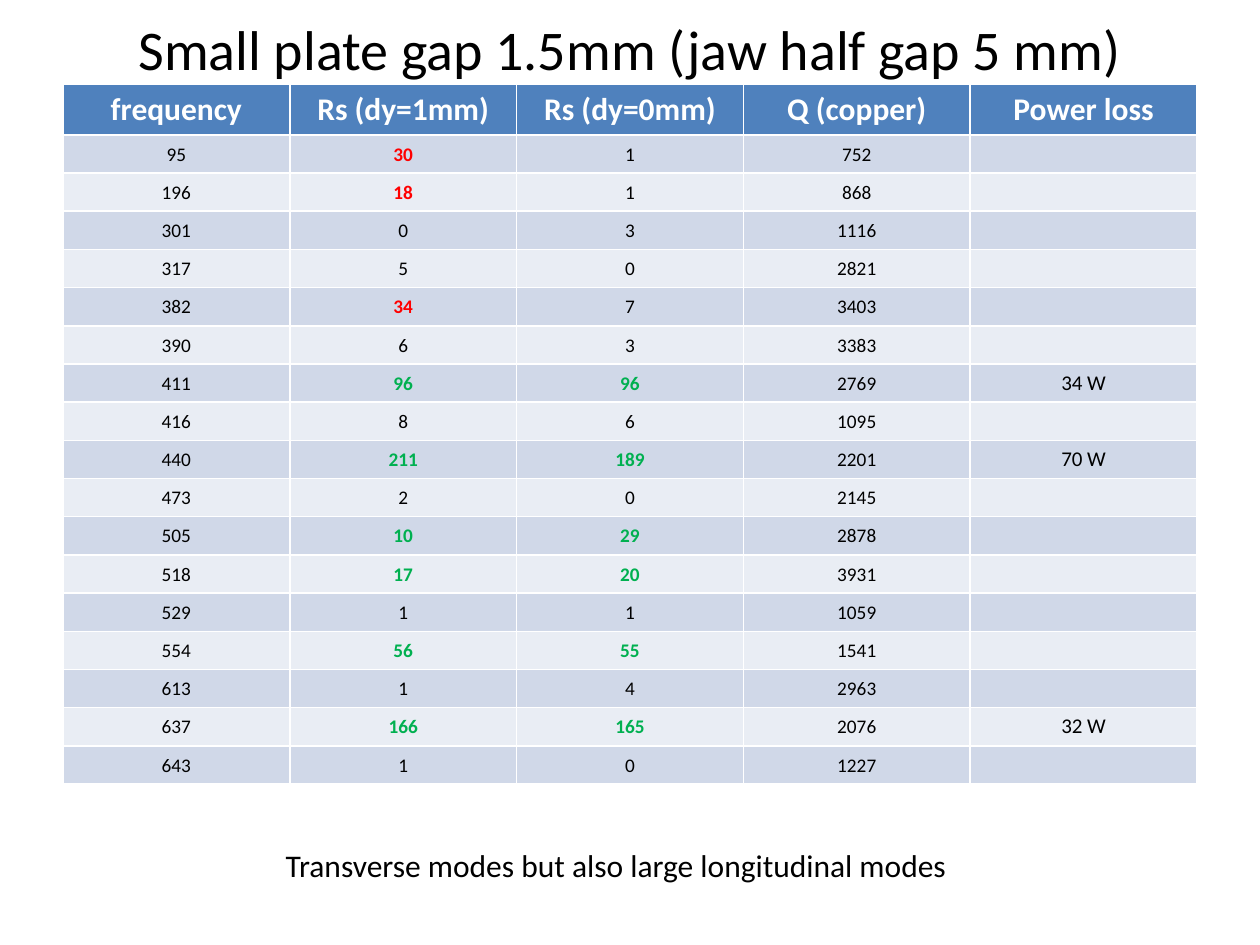
"""Build the slide listing the modes of a small plate with a 1.5 mm gap."""
from pptx import Presentation
from pptx.dml.color import RGBColor
from pptx.enum.text import MSO_ANCHOR as ANCHOR, PP_ALIGN as ALIGN
from pptx.util import Cm, Pt

BLACK = RGBColor(0x00, 0x00, 0x00)
WHITE = RGBColor(0xFF, 0xFF, 0xFF)
RED = RGBColor(0xFF, 0x00, 0x00)
GREEN = RGBColor(0x00, 0xB0, 0x50)
BLUE = RGBColor(0x4F, 0x81, 0xBD)
BAND_DARK = RGBColor(0xD0, 0xD8, 0xE8)
BAND_LIGHT = RGBColor(0xE9, 0xED, 0xF4)

HEADER = ["frequency", "Rs (dy=1mm)", "Rs (dy=0mm)", "Q (copper)", "Power loss"]
MODES = [
    (95, 30, 1, 752, ""),
    (196, 18, 1, 868, ""),
    (301, 0, 3, 1116, ""),
    (317, 5, 0, 2821, ""),
    (382, 34, 7, 3403, ""),
    (390, 6, 3, 3383, ""),
    (411, 96, 96, 2769, "34 W"),
    (416, 8, 6, 1095, ""),
    (440, 211, 189, 2201, "70 W"),
    (473, 2, 0, 2145, ""),
    (505, 10, 29, 2878, ""),
    (518, 17, 20, 3931, ""),
    (529, 1, 1, 1059, ""),
    (554, 56, 55, 1541, ""),
    (613, 1, 4, 2963, ""),
    (637, 166, 165, 2076, "32 W"),
    (643, 1, 0, 1227, ""),
]
TRANSVERSE = {95, 196, 382}
LONGITUDINAL = {411, 440, 505, 518, 554, 637}


def write(p, text, size, color=BLACK, bold=False, align=ALIGN.CENTER):
    p.alignment = align
    if not text:
        p._p.get_or_add_endParaRPr().set("sz", str(size * 100))
        return
    r = p.add_run()
    r.text = text
    r.font.color.rgb = color
    for name, value in {"name": "Calibri", "size": Pt(size), "bold": bold}.items():
        setattr(r.font, name, value)


prs = Presentation()
prs.slide_width, prs.slide_height = Cm(25.4), Cm(19.05)
s = prs.slides.add_slide(prs.slide_layouts[6])

texts = [
    ("Small plate gap 1.5mm (jaw half gap 5 mm)", 32, ALIGN.CENTER,
     (1.27, -0.2, 22.86, 2.34), {"word_wrap": True, "vertical_anchor": ANCHOR.MIDDLE}),
    ("Transverse modes but also large longitudinal modes", 18, ALIGN.LEFT,
     (5.51, 16.94, 14, 1.03), {"word_wrap": False, "vertical_anchor": ANCHOR.TOP}),
]
for text, size, align, box, fmt in texts:
    sp = s.shapes.add_textbox(*map(Cm, box))
    tf = sp.text_frame
    for name, value in fmt.items():
        setattr(tf, name, value)
    write(tf.paragraphs[0], text, size, align=align)

rows = [HEADER, *MODES]
table = s.shapes.add_table(len(rows), len(HEADER), Cm(1.27), Cm(1.7),
                           Cm(22.86), Cm(14.09)).table
for i, values in enumerate(rows):
    table.rows[i].height = Cm(0.77 if i else 1)
    for j, value in enumerate(values):
        cell = table.cell(i, j)
        cell.vertical_anchor = ANCHOR.MIDDLE
        cell.fill.solid()
        p = cell.text_frame.paragraphs[0]
        if i == 0:
            cell.fill.fore_color.rgb = BLUE
            write(p, value, 18, WHITE, True)
            continue
        cell.fill.fore_color.rgb = BAND_DARK if i % 2 else BAND_LIGHT
        inset = Cm(0 if j == 4 else 0.02)
        fmt = {"margin_left": inset, "margin_top": inset,
               "margin_right": inset, "margin_bottom": 0}
        for name, length in fmt.items():
            setattr(cell, name, length)
        color = BLACK
        if values[0] in LONGITUDINAL and j in (1, 2):
            color = GREEN
        elif values[0] in TRANSVERSE and j == 1:
            color = RED
        write(p, str(value), 12 if j == 4 else 11, color, color != BLACK)

prs.save("out.pptx")
